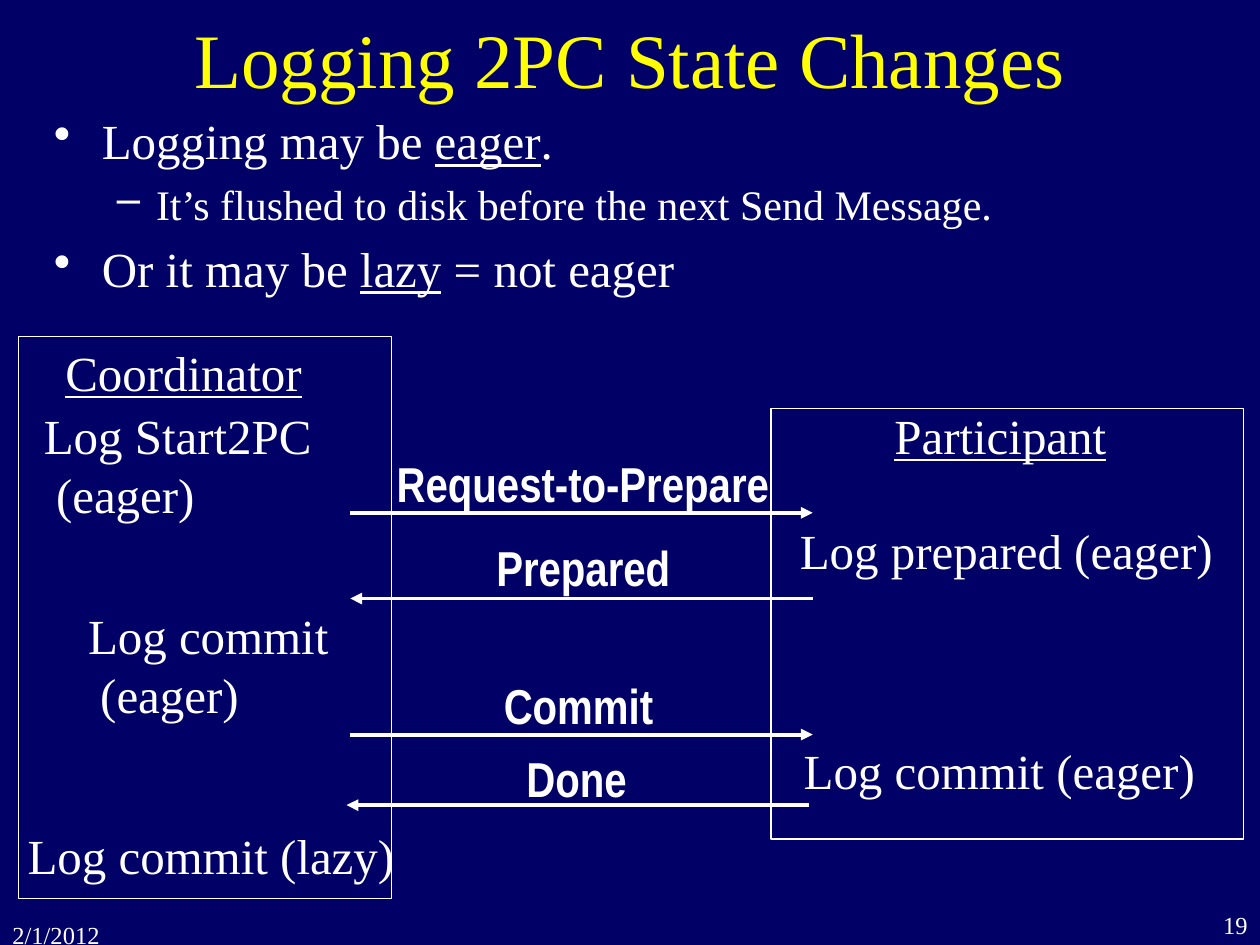
from lxml import etree
from pptx import Presentation
from pptx.dml.color import RGBColor
from pptx.enum.shapes import MSO_CONNECTOR, MSO_SHAPE
from pptx.enum.text import MSO_ANCHOR, MSO_AUTO_SIZE, PP_ALIGN
from pptx.oxml.ns import qn
from pptx.util import Inches, Pt

LEFT, CENTER, RIGHT = PP_ALIGN.LEFT, PP_ALIGN.CENTER, PP_ALIGN.RIGHT
RECTANGLE, STRAIGHT = MSO_SHAPE.RECTANGLE, MSO_CONNECTOR.STRAIGHT
MIDDLE, NO_AUTOFIT = MSO_ANCHOR.MIDDLE, MSO_AUTO_SIZE.NONE
FIT_SHAPE = MSO_AUTO_SIZE.SHAPE_TO_FIT_TEXT

NAVY = RGBColor(0x00, 0x00, 0x66)
WHITE = RGBColor(0xFF, 0xFF, 0xFF)
YELLOW = RGBColor(0xFF, 0xFF, 0x00)
SERIF, NARROW = "Times New Roman", "Arial Narrow"

# Content: boxes are (left, top, width, height) in inches
TITLE = "Logging 2PC State Changes"
FOOTERS = [
    ("2/1/2012", (0, 7.25, 1, 0.25), LEFT),
    ("19", (9.08, 7.17, 0.92, 0.33), RIGHT),
]
# Bullets: level and (text, underlined) pieces
BULLETS = [
    (0, [("Logging may be ", False), ("eager", True), (".", False)]),
    (1, [("It’s flushed to disk before the next Send Message.", False)]),
    (0, [("Or it may be ", False), ("lazy", True), (" = not eager", False)]),
]
# Per level: bullet sign, text size, left margin, hanging indent
LEVELS = [("•", 28, 0.38, 0.38), ("–", 24, 0.81, 0.31)]

PARTICIPANT_BOX = (6.12, 3.24, 3.75, 3.42)
COORDINATOR_BOX = (0.15, 2.67, 2.96, 4.46)
LINE_HEIGHT, TWO_LINES = 0.57, 1.03
HEADINGS = [
    ("Coordinator", (0.42, 2.67, 2.08, LINE_HEIGHT)),
    ("Participant", (7, 3.17, 1.88, LINE_HEIGHT)),
]
LOG_STEPS = [
    ("Log Start2PC\n (eager)", (0.25, 3.17, 2.33, TWO_LINES)),
    ("Log commit\n (eager)", (0.6, 4.76, 2.11, TWO_LINES)),
    ("Log commit (lazy)", (0.12, 6.5, 3.11, LINE_HEIGHT)),
    ("Log prepared (eager)", (6.25, 4.08, 3.48, LINE_HEIGHT)),
    ("Log commit (eager)", (6.28, 5.83, 3.31, LINE_HEIGHT)),
]
# Messages: label, label box, arrow start x, end x, y
MESSAGES = [
    ("Request-to-Prepare", (3.05, 3.55, 3.16, LINE_HEIGHT), 2.78, 6.45, 4.07),
    ("Prepared", (3.84, 4.22, 1.58, LINE_HEIGHT), 6.45, 2.78, 4.75),
    ("Commit", (3.9, 5.31, 1.39, LINE_HEIGHT), 2.78, 6.45, 5.83),
    ("Done", (4.08, 5.89, 1, LINE_HEIGHT), 6.42, 2.75, 6.39),
]


def add_run(paragraph, text, size=28, font=SERIF, color=WHITE, bold=False, underline=False):
    run = paragraph.add_run()
    run.text = text
    run.font.size = Pt(size)
    run.font.name = font
    run.font.color.rgb = color
    run.font.bold = bold
    run.font.underline = underline


def add_text(slide, text, box, align=LEFT, wrap=False, **style):
    frame = slide.shapes.add_textbox(*map(Inches, box)).text_frame
    frame.word_wrap = wrap
    frame.auto_size = NO_AUTOFIT if wrap else FIT_SHAPE
    for index, line in enumerate(text.split("\n")):
        paragraph = frame.add_paragraph() if index else frame.paragraphs[0]
        paragraph.alignment = align
        add_run(paragraph, line, **style)


def add_bullets(slide, box):
    frame = slide.shapes.add_textbox(*map(Inches, box)).text_frame
    frame.word_wrap = True
    for index, (level, pieces) in enumerate(BULLETS):
        sign, size, margin, hanging = LEVELS[level]
        paragraph = frame.add_paragraph() if index else frame.paragraphs[0]
        paragraph.level = level
        paragraph.space_before = Pt(0.2 * size)
        properties = paragraph._p.get_or_add_pPr()
        properties.set("marL", str(Inches(margin)))
        properties.set("indent", str(-Inches(hanging)))
        etree.SubElement(properties, qn("a:buChar"), char=sign)
        for text, underline in pieces:
            add_run(paragraph, text, size=size, underline=underline)


def add_box(slide, box, fill=None):
    shape = slide.shapes.add_shape(RECTANGLE, *map(Inches, box))
    shape.shadow.inherit = False
    if fill is None:
        shape.fill.background()
    else:
        shape.fill.solid()
        shape.fill.fore_color.rgb = fill
    shape.line.color.rgb = WHITE
    shape.line.width = Pt(0.75)


def add_arrow(slide, start_x, end_x, y):
    arrow = slide.shapes.add_connector(
        STRAIGHT, Inches(start_x), Inches(y), Inches(end_x), Inches(y))
    arrow.line.color.rgb = WHITE
    arrow.line.width = Pt(2.25)
    etree.SubElement(arrow.line._get_or_add_ln(), qn("a:tailEnd"), type="triangle")
    etree.SubElement(arrow._element.spPr, qn("a:effectLst"))


def main():
    presentation = Presentation()
    presentation.slide_width, presentation.slide_height = Inches(10), Inches(7.5)
    slide = presentation.slides.add_slide(presentation.slide_layouts[5])
    slide.background.fill.solid()
    slide.background.fill.fore_color.rgb = NAVY

    # Title
    title = slide.shapes.title
    title.left, title.top = Inches(0.75), Inches(0.08)
    title.width, title.height = Inches(8.5), Inches(0.75)
    title.text_frame.auto_size = NO_AUTOFIT
    title.text_frame.vertical_anchor = MIDDLE
    paragraph = title.text_frame.paragraphs[0]
    paragraph.alignment = CENTER
    add_run(paragraph, TITLE, size=44, color=YELLOW)

    # Date, page number and bullets
    for text, box, align in FOOTERS:
        add_text(slide, text, box, align=align, wrap=True, size=14)
    add_bullets(slide, (0.33, 0.83, 9.25, 1.75))

    # The two sides and their log steps
    add_box(slide, PARTICIPANT_BOX, fill=NAVY)
    add_box(slide, COORDINATOR_BOX)
    for text, box in HEADINGS:
        add_text(slide, text, box, underline=True)
    for text, box in LOG_STEPS:
        add_text(slide, text, box)

    # Messages between them
    for text, box, start_x, end_x, y in MESSAGES:
        add_text(slide, text, box, font=NARROW, bold=True)
        add_arrow(slide, start_x, end_x, y)

    presentation.save("out.pptx")


if __name__ == "__main__":
    main()
